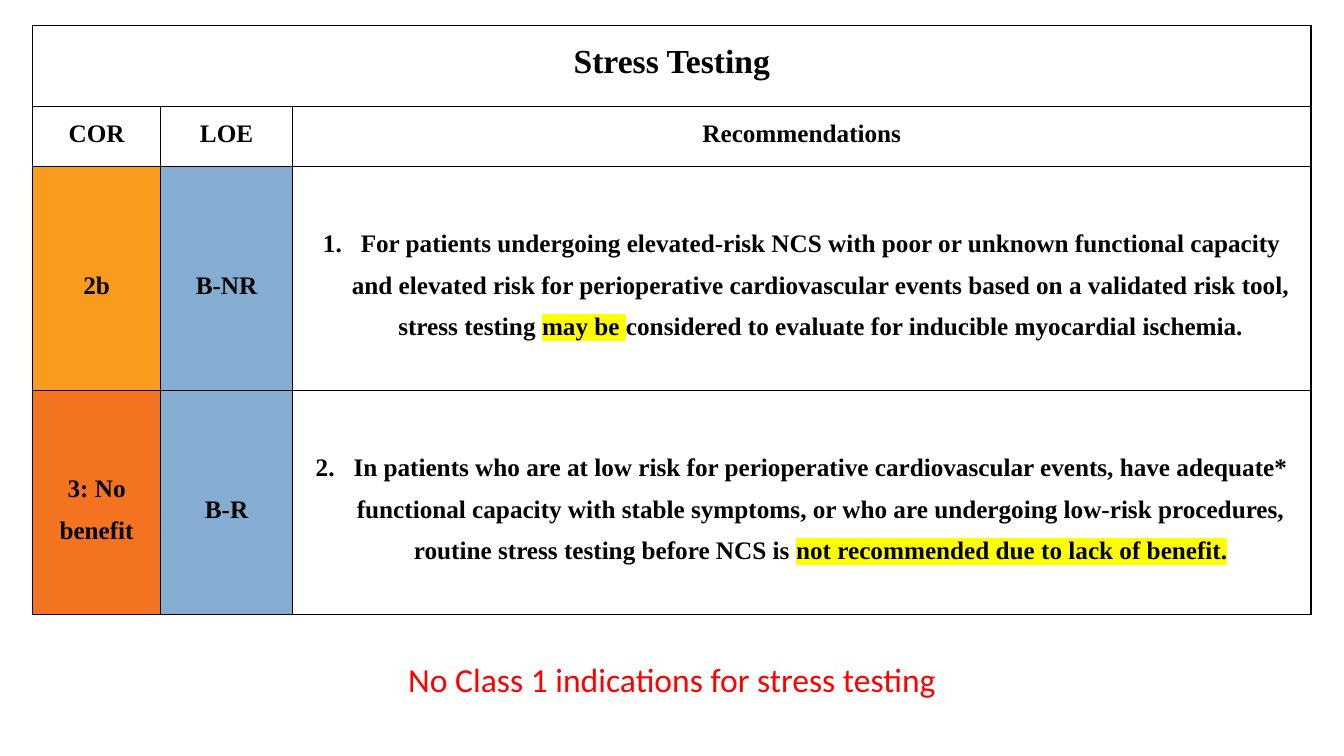
from lxml.etree import SubElement
from pptx import Presentation
from pptx.dml.color import RGBColor
from pptx.enum.text import MSO_ANCHOR, PP_ALIGN
from pptx.oxml import parse_xml
from pptx.oxml.ns import nsdecls, qn
from pptx.util import Pt

COLORS = {
    "black": "000000", "white": "FFFFFF", "red": "FF0000", "yellow": "FFFF00",
    "amber": "F99B1C", "orange": "F37321", "blue": "85ADD1",
}
TITLE = "Stress Testing"
HEADINGS = ["COR", "LOE", "Recommendations"]
RECOMMENDATIONS = [
    ("2b", "amber", "B-NR", [
        ("For patients undergoing elevated-risk NCS with poor or unknown functional capacity "
         "and elevated risk for perioperative cardiovascular events based on a validated risk "
         "tool, stress testing ", None),
        ("may be ", "yellow"),
        ("considered to evaluate for inducible myocardial ischemia.", None),
    ]),
    ("3: No benefit", "orange", "B-R", [
        ("In patients who are at low risk for perioperative cardiovascular events, have "
         "adequate* functional capacity with stable symptoms, or who are undergoing low-risk "
         "procedures, routine stress testing before NCS is ", None),
        ("not recommended due to lack of benefit.", "yellow"),
    ]),
]
FOOTNOTE = "No Class 1 indications for stress testing"
SLIDE_WIDTH, SLIDE_HEIGHT = 960, 540
TABLE_LEFT, TABLE_TOP = 23.3, 18.2
COLUMN_WIDTHS = [91.4, 94.3, 727.5]
ROW_HEIGHTS = [57.6, 43.2, 160, 160]


def add_run(paragraph, text, font_name, size, color, bold=False, highlight=None):
    """Append one formatted run to a paragraph."""
    run = paragraph.add_run()
    run.text = text
    font = run.font
    font.size, font.bold = Pt(size), bold
    font.color.rgb = RGBColor.from_string(COLORS[color])
    if highlight:
        mark = SubElement(font._element, qn("a:highlight"))
        SubElement(mark, qn("a:srgbClr"), val=COLORS[highlight])
    font.name = font_name


def add_borders(cell):
    """Draw a thin line on all four sides of a cell."""
    properties = cell._tc.get_or_add_tcPr()
    for index, side in enumerate(["lnL", "lnR", "lnT", "lnB"]):
        properties.insert(index, parse_xml(
            f'<a:{side} {nsdecls("a")} w="{Pt(1)}"><a:solidFill>'
            f'<a:srgbClr val="{COLORS["black"]}"/></a:solidFill></a:{side}>'))


def fill_cell(cell, runs, size=18, fill="white", anchor=MSO_ANCHOR.MIDDLE):
    """Write runs into a cell and return its paragraph."""
    cell.fill.solid()
    cell.fill.fore_color.rgb = RGBColor.from_string(COLORS[fill])
    cell.vertical_anchor = anchor
    cell.margin_left = cell.margin_right = Pt(5.4)
    cell.margin_top = cell.margin_bottom = 0
    paragraph = cell.text_frame.paragraphs[0]
    paragraph.alignment = PP_ALIGN.CENTER
    paragraph.line_spacing = 1.5
    for text, highlight in runs:
        add_run(paragraph, text, "Times New Roman", size, "black", True, highlight)
    return paragraph


def number_paragraph(paragraph, number):
    """Give a paragraph an automatic number with a hanging indent."""
    properties = paragraph._p.get_or_add_pPr()
    properties.set("marL", str(Pt(27)))
    properties.set("indent", str(Pt(-27)))
    SubElement(properties, qn("a:buFont"), typeface="+mj-lt")
    SubElement(properties, qn("a:buAutoNum"), type="arabicPeriod", startAt=str(number))
    tabs = SubElement(properties, qn("a:tabLst"))
    SubElement(tabs, qn("a:tab"), pos=str(Pt(16)), algn="l")


def add_recommendation_table(slide):
    """Build the table of recommendations."""
    table = slide.shapes.add_table(
        len(ROW_HEIGHTS), len(COLUMN_WIDTHS), Pt(TABLE_LEFT), Pt(TABLE_TOP),
        Pt(sum(COLUMN_WIDTHS)), Pt(sum(ROW_HEIGHTS))).table
    table.first_row = table.horz_banding = False
    for column, width in zip(table.columns, COLUMN_WIDTHS):
        column.width = Pt(width)
    for row, height in zip(table.rows, ROW_HEIGHTS):
        row.height = Pt(height)

    table.cell(0, 0).merge(table.cell(0, len(COLUMN_WIDTHS) - 1))
    fill_cell(table.cell(0, 0), [(TITLE, None)], size=24, anchor=MSO_ANCHOR.TOP)
    for column, heading in enumerate(HEADINGS):
        fill_cell(table.cell(1, column), [(heading, None)], anchor=MSO_ANCHOR.TOP)
    for number, (cor, cor_color, loe, runs) in enumerate(RECOMMENDATIONS, 1):
        row = number + 1
        fill_cell(table.cell(row, 0), [(cor, None)], fill=cor_color)
        fill_cell(table.cell(row, 1), [(loe, None)], fill="blue")
        number_paragraph(fill_cell(table.cell(row, 2), runs), number)
    for cell in table.iter_cells():
        add_borders(cell)


def add_footnote(slide):
    """Add the centred line below the table."""
    box = slide.shapes.add_textbox(0, Pt(467.3), Pt(SLIDE_WIDTH), Pt(36))
    box.text_frame.word_wrap = True
    paragraph = box.text_frame.paragraphs[0]
    paragraph.alignment = PP_ALIGN.CENTER
    add_run(paragraph, FOOTNOTE, "Calibri", 24, "red")


def main():
    """Build and save the slide."""
    presentation = Presentation()
    presentation.slide_width, presentation.slide_height = Pt(SLIDE_WIDTH), Pt(SLIDE_HEIGHT)
    slide = presentation.slides.add_slide(presentation.slide_layouts[6])
    add_recommendation_table(slide)
    add_footnote(slide)
    presentation.save("out.pptx")


if __name__ == "__main__":
    main()
